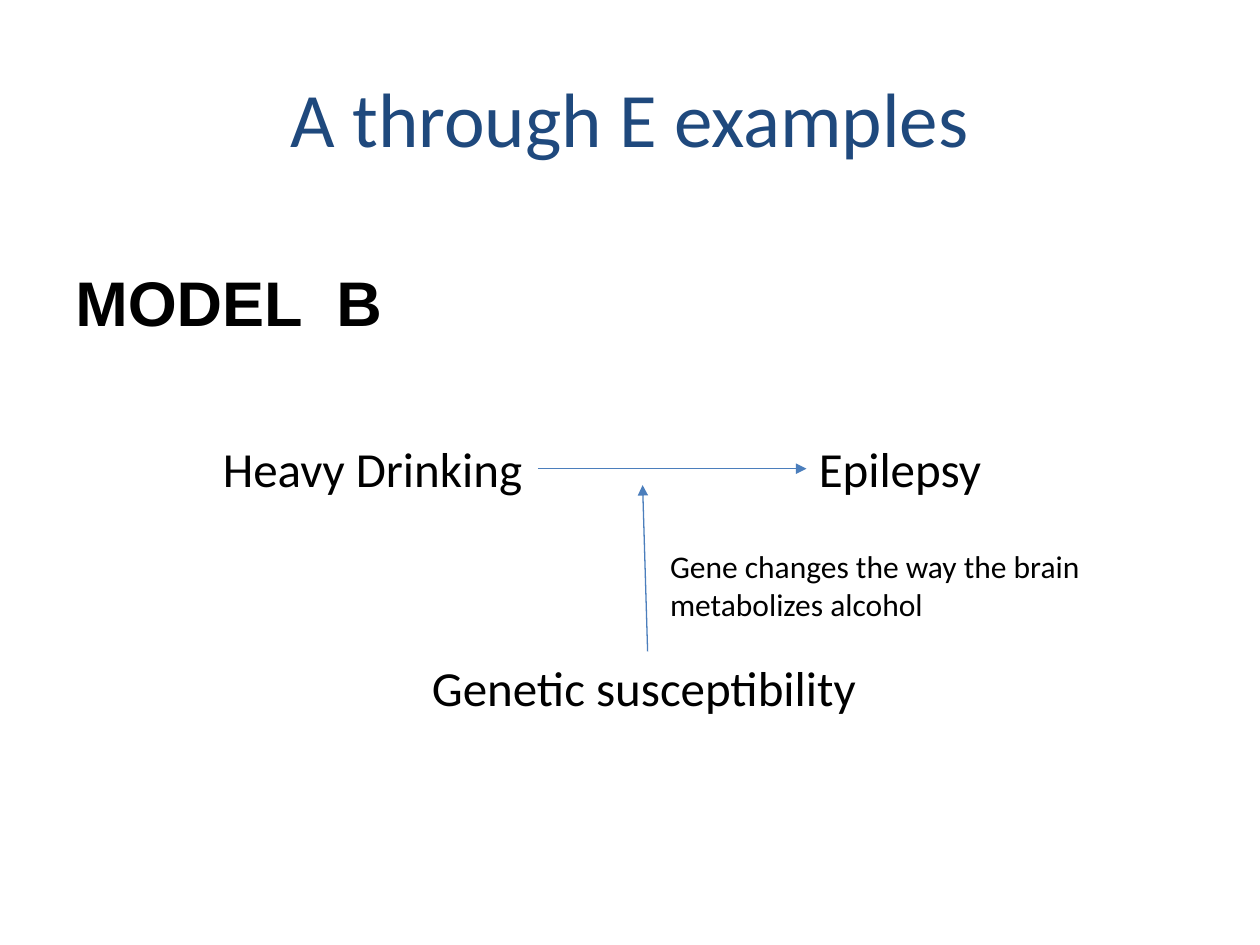
from lxml import etree
from pptx import Presentation
from pptx.dml.color import RGBColor
from pptx.enum.shapes import MSO_CONNECTOR
from pptx.enum.text import MSO_ANCHOR, MSO_AUTO_SIZE, PP_ALIGN
from pptx.oxml.ns import qn
from pptx.util import Inches, Pt

LINE = MSO_CONNECTOR.STRAIGHT
MID = MSO_ANCHOR.MIDDLE
GROW = MSO_AUTO_SIZE.SHAPE_TO_FIT_TEXT
MIDDLE = PP_ALIGN.CENTER

HUES = {"title": "1F497D", "text": "000000", "arrow": "4B7EBC"}
TITLE = "A through E examples"
ROW, BASE = 3.43, 5.17
LABELS = [
    ("Heavy Drinking", (1.67, ROW, 2.6, 0.57), 28, "Calibri", False, False),
    ("Epilepsy", (6.4, ROW, 1.5, 0.57), 28, "Calibri", False, False),
    ("Genetic susceptibility", (3.33, BASE, 3.61, 0.57), 28, "Calibri", False, False),
    ("MODEL  B", (0.5, 2.04, 2.66, 0.71), 36, "Arial", True, False),
    ("Gene changes the way the brain metabolizes alcohol",
     (5.22, 4.29, 3.86, 0.71), 18, "Calibri", False, True),
]
ARROWS = [
    ((5.14, BASE), (5.1, 3.85)),
    ((4.27, 3.72), (6.4, 3.72)),
]


def place(shape, box):
    shape.left, shape.top, shape.width, shape.height = map(Inches, box)


def write(frame, text, size, font, hue, bold=False):
    para = frame.paragraphs[0]
    run = para.add_run()
    run.text = text
    run.font.size = Pt(size)
    run.font.name = font
    run.font.bold = bold
    run.font.color.rgb = RGBColor.from_string(HUES[hue])
    return para


def add_label(slide, text, box, size, font, bold, wrap):
    frame = slide.shapes.add_textbox(*map(Inches, box)).text_frame
    frame.word_wrap = wrap
    frame.auto_size = GROW
    write(frame, text, size, font, "text", bold)


def add_arrow(slide, start, end):
    arrow = slide.shapes.add_connector(LINE, *map(Inches, start + end))
    arrow.line.color.rgb = RGBColor.from_string(HUES["arrow"])
    arrow.line.width = Pt(0.75)
    etree.SubElement(arrow.line._get_or_add_ln(), qn("a:tailEnd"), type="triangle")
    etree.SubElement(arrow._element.spPr, qn("a:effectLst"))


def main():
    deck = Presentation()
    deck.slide_width, deck.slide_height = Inches(10), Inches(7.5)
    slide = deck.slides.add_slide(deck.slide_layouts[5])
    title = slide.shapes.title
    place(title, (0.5, 0.3, 9, 1.25))
    title.text_frame.vertical_anchor = MID
    write(title.text_frame, TITLE, 44, "Calibri", "title").alignment = MIDDLE
    for label in LABELS:
        add_label(slide, *label)
    for start, end in ARROWS:
        add_arrow(slide, start, end)
    deck.save("out.pptx")


if __name__ == "__main__":
    main()
